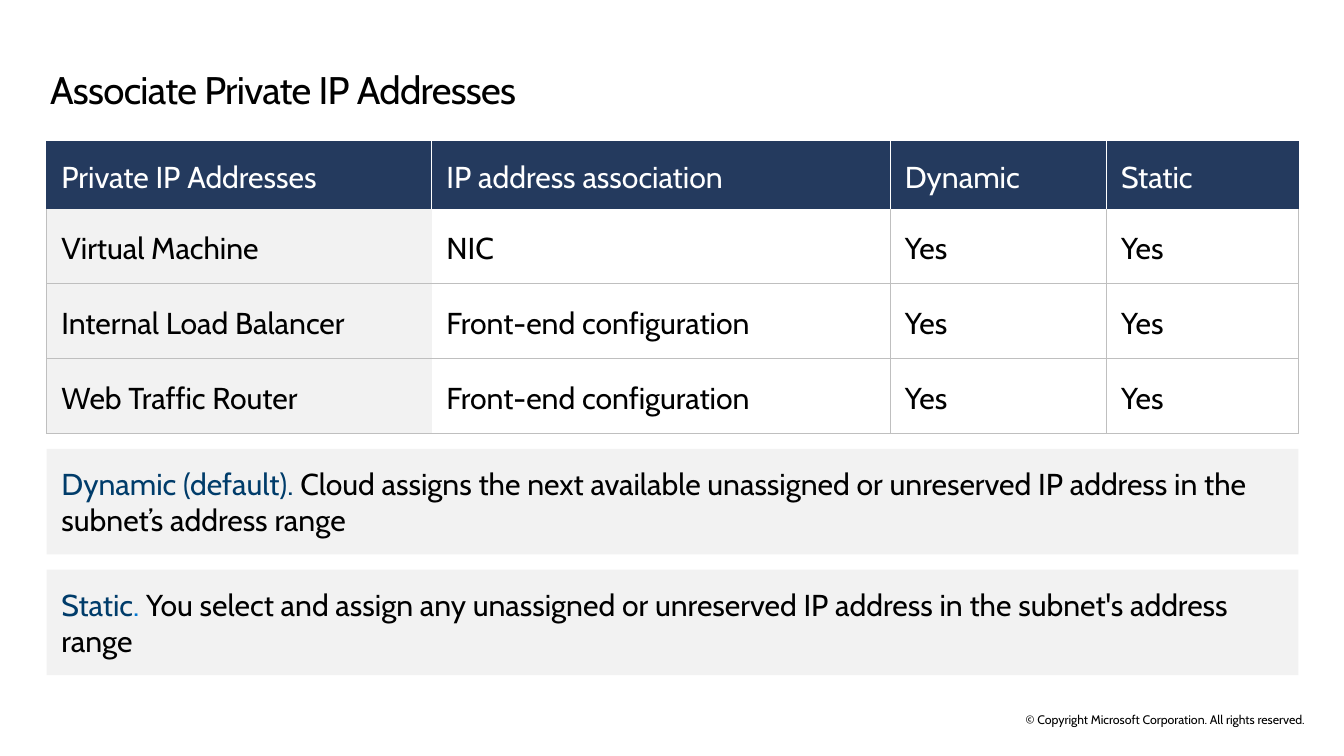
import itertools
from dataclasses import dataclass

import lxml.etree
import pptx
import pptx.dml.color
import pptx.enum.shapes
import pptx.enum.text
import pptx.oxml.ns
import pptx.util

Pt = pptx.util.Pt
MIDDLE = pptx.enum.text.MSO_ANCHOR.MIDDLE
TOP = pptx.enum.text.MSO_ANCHOR.TOP


@dataclass(frozen=True)
class Theme:
    font: str = "Cabin"
    title_size: float = 28
    body_size: float = 22
    copyright_size: float = 9
    black: str = "000000"
    white: str = "FFFFFF"
    navy: str = "243A5E"
    panel: str = "F2F2F2"
    rule: str = "BFBFBF"
    term: str = "003C6A"
    accent: str = "0078D3"


THEME = Theme()
PADDING = (10.8, 7.2)

HEADINGS = ["Private IP Addresses", "IP address association", "Dynamic", "Static"]
RESOURCES = [
    ["Virtual Machine", "NIC", "Yes", "Yes"],
    ["Internal Load Balancer", "Front-end configuration", "Yes", "Yes"],
    ["Web Traffic Router", "Front-end configuration", "Yes", "Yes"],
]
DYNAMIC_NOTE = [
    ("Dynamic (default). ", THEME.term),
    ("Cloud assigns the next available unassigned or unreserved IP address "
     "in the subnet’s address range", THEME.black),
]
STATIC_NOTE = [
    ("Static", THEME.term),
    (". ", THEME.accent),
    ("You select and assign any unassigned or unreserved IP address "
     "in the subnet's address range", THEME.black),
]


def rgb(color):
    return pptx.dml.color.RGBColor.from_string(color)


def write(frame, pieces, *, size=THEME.body_size, padding=PADDING, anchor=MIDDLE,
          align=pptx.enum.text.PP_ALIGN.LEFT, line_spacing=None, tracking=None):
    """Write (text, colour) pieces as one paragraph of a text frame."""
    frame.word_wrap = True
    frame.vertical_anchor = anchor
    frame.margin_left = frame.margin_right = Pt(padding[0])
    frame.margin_top = frame.margin_bottom = Pt(padding[1])
    paragraph = frame.paragraphs[0]
    paragraph.alignment = align
    paragraph.line_spacing = line_spacing
    for text, color in pieces:
        run = paragraph.add_run()
        run.text = text
        run.font.name = THEME.font
        run.font.size = Pt(size)
        run.font.color.rgb = rgb(color)
        if tracking is not None:
            run._r.get_or_add_rPr().set("spc", str(round(tracking * 100)))


def add_label(slide, box, text, **style):
    label = slide.shapes.add_textbox(*map(Pt, box))
    write(label.text_frame, [(text, THEME.black)], padding=(0, 0), **style)


def draw_border(cell, side, color):
    qn = pptx.oxml.ns.qn
    properties = cell._tc.get_or_add_tcPr()
    line = lxml.etree.SubElement(properties, qn(f"a:ln{side}"), w=str(Pt(0.5)))
    if color is None:
        lxml.etree.SubElement(line, qn("a:noFill"))
    else:
        fill = lxml.etree.SubElement(line, qn("a:solidFill"))
        lxml.etree.SubElement(fill, qn("a:srgbClr"), val=color)


def vertical_rule(row, edge):
    """Colour of the rule at a column edge, counted from the left."""
    if row == 0:
        return THEME.navy if edge in (0, len(HEADINGS)) else THEME.white
    return None if edge == 1 else THEME.rule


def horizontal_rule(edge):
    """Colour of the rule at a row edge, counted from the top."""
    return {0: THEME.navy, 1: None}.get(edge, THEME.rule)


def add_address_table(slide, box, column_shares, header_height):
    left, top, width, height = box
    rows = [HEADINGS] + RESOURCES
    table = slide.shapes.add_table(len(rows), len(HEADINGS), *map(Pt, box)).table
    for column, share in zip(table.columns, column_shares):
        column.width = Pt(width * share / sum(column_shares))
    for row in table.rows:
        row.height = Pt((height - header_height) / len(RESOURCES))
    table.rows[0].height = Pt(header_height)

    for r, c in itertools.product(range(len(rows)), range(len(HEADINGS))):
        cell = table.cell(r, c)
        # Borders
        draw_border(cell, "L", vertical_rule(r, c))
        draw_border(cell, "R", vertical_rule(r, c + 1))
        draw_border(cell, "T", horizontal_rule(r))
        draw_border(cell, "B", horizontal_rule(r + 1))
        # Fill: dark header, tinted first column, clear body
        if r == 0 or c == 0:
            cell.fill.solid()
            cell.fill.fore_color.rgb = rgb(THEME.navy if r == 0 else THEME.panel)
        else:
            cell.fill.background()
        # Text
        cell.vertical_anchor = MIDDLE
        cell.margin_left = cell.margin_right = Pt(PADDING[0])
        cell.margin_top = cell.margin_bottom = Pt(PADDING[1])
        paragraph = cell.text_frame.paragraphs[0]
        paragraph.line_spacing = 1.15
        run = paragraph.add_run()
        run.text = rows[r][c]
        run.font.name = THEME.font
        run.font.size = Pt(THEME.body_size)
        run.font.bold = False
        run.font.color.rgb = rgb(THEME.white if r == 0 else THEME.black)


def add_notes_panels(slide, box, gap, notes):
    left, top, width, height = box
    panel_height = (height - gap * (len(notes) - 1)) / len(notes)
    for index, pieces in enumerate(notes):
        panel_top = top + index * (panel_height + gap)
        panel = slide.shapes.add_shape(
            pptx.enum.shapes.MSO_SHAPE.RECTANGLE,
            Pt(left), Pt(panel_top), Pt(width), Pt(panel_height))
        panel.shadow.inherit = False
        panel.fill.solid()
        panel.fill.fore_color.rgb = rgb(THEME.panel)
        panel.line.fill.background()
        write(panel.text_frame, pieces)


def main():
    deck = pptx.Presentation()
    deck.slide_width, deck.slide_height = Pt(979.2), Pt(550.8)
    slide = deck.slides.add_slide(deck.slide_layouts[6])
    left, width = 34, 912

    # Title
    add_label(slide, (36.5, 50, 908, 32), "Associate Private IP Addresses",
              size=THEME.title_size, anchor=TOP, line_spacing=Pt(32), tracking=-0.5)
    # Table and explanations
    add_address_table(slide, (left, 103, width, 213), (280.5, 334, 157.5, 140), 49)
    add_notes_panels(slide, (left, 327, width, 165), 11, [DYNAMIC_NOTE, STATIC_NOTE])
    # Copyright
    add_label(slide, (718.5, 518.5, 260.7, 11),
              "© Copyright Microsoft Corporation. All rights reserved.",
              size=THEME.copyright_size, align=pptx.enum.text.PP_ALIGN.CENTER)
    deck.save("out.pptx")


if __name__ == "__main__":
    main()
